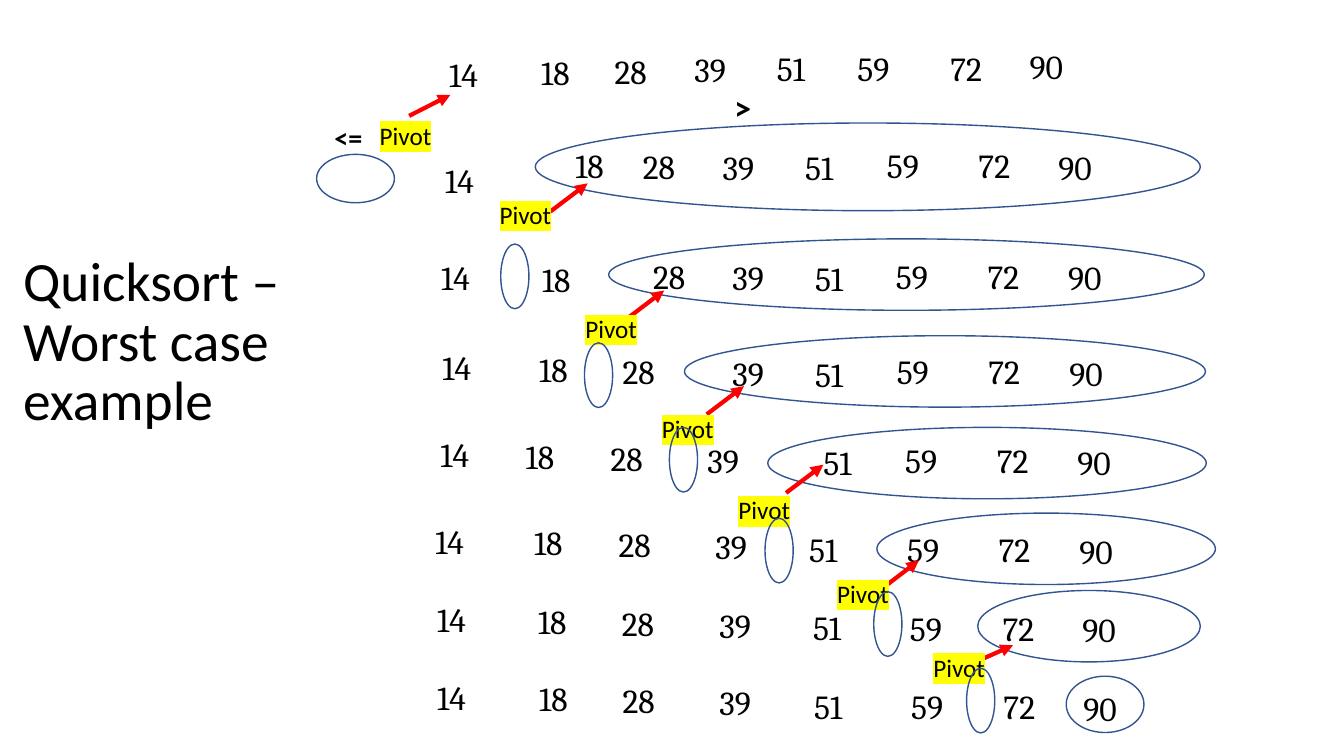
from dataclasses import dataclass

from lxml.etree import SubElement
from pptx import Presentation
from pptx.dml.color import RGBColor
from pptx.enum.shapes import MSO_CONNECTOR, MSO_SHAPE
from pptx.enum.text import MSO_ANCHOR, MSO_AUTO_SIZE, PP_ALIGN
from pptx.oxml.ns import qn
from pptx.util import Cm, Pt


@dataclass(frozen=True)
class Theme:
    text: str = "000000"
    ring: str = "325491"
    arrow: str = "FF0000"
    highlight: str = "FFFF00"
    body_font: str = "Calibri"
    number_font: str = "Cambria"
    title_size: float = 39.6
    number_size: float = 24
    label_size: float = 18
    sign_size: float = 20
    ring_width: float = 1
    arrow_width: float = 3


@dataclass(frozen=True)
class Step:
    lefts: tuple
    tops: tuple
    larger: tuple = ()
    smaller: tuple = ()
    pivot: tuple = ()
    arrow: tuple = ()


THEME = Theme()
NUMBERS = (14, 18, 28, 39, 51, 59, 72, 90)
NUMBER_BOX = (1.45, 1.27)
PIVOT_BOX = (2.03, 1.02)
SIGN_BOX = (1.22, 1.12)
EMPTY_RING = (0.71, 1.63)

STEPS = (
    Step(
        lefts=(11.07, 13.39, 15.24, 17.25, 19.33, 21.36, 23.7, 25.7),
        tops=(1.24, 1.19, 1.17, 1.12, 1.09, 1.09, 1.09, 1.02),
        pivot=(9.32, 2.9), arrow=(10.31, 2.92, 11.35, 2.39),
    ),
    Step(
        lefts=(10.97, 14.25, 15.95, 17.96, 20.04, 22.1, 24.41, 26.42),
        tops=(3.91, 3.53, 3.56, 3.58, 3.58, 3.53, 3.53, 3.58),
        larger=(13.49, 3.1, 16.76, 2.21), smaller=(7.98, 3.89, 1.96, 1.22),
        pivot=(12.34, 4.9), arrow=(13.87, 5.33, 14.81, 4.62),
    ),
    Step(
        lefts=(10.87, 13.41, 16.21, 18.21, 20.29, 22.33, 24.64, 26.67),
        tops=(6.35, 6.4, 6.32, 6.35, 6.38, 6.32, 6.32, 6.35),
        larger=(15.34, 6.02, 15.01, 1.8), smaller=(12.62, 6.15, *EMPTY_RING),
        pivot=(14.5, 7.77), arrow=(15.8, 8.03, 16.74, 7.32),
    ),
    Step(
        lefts=(10.9, 13.34, 15.44, 18.21, 20.29, 22.35, 24.66, 26.7),
        tops=(8.61, 8.66, 8.71, 8.76, 8.79, 8.71, 8.71, 8.76),
        larger=(17.25, 8.46, 13.13, 1.8), smaller=(14.73, 8.64, *EMPTY_RING),
        pivot=(16.43, 10.29), arrow=(17.81, 10.44, 18.75, 9.73),
    ),
    Step(
        lefts=(10.85, 13, 15.14, 17.58, 20.5, 22.56, 24.87, 26.9),
        tops=(10.8, 10.85, 10.9, 10.95, 11, 10.95, 10.95, 11),
        larger=(19.35, 10.77, 11.05, 1.8), smaller=(16.87, 10.77, *EMPTY_RING),
        pivot=(18.36, 12.34), arrow=(19.81, 12.42, 20.75, 11.71),
    ),
    Step(
        lefts=(10.72, 13.21, 15.34, 17.78, 20.14, 22.61, 24.92, 26.95),
        tops=(13, 13.03, 13.08, 13.13, 13.21, 13.21, 13.21, 13.26),
        larger=(22.1, 12.93, 8.53, 1.8), smaller=(19.28, 13.06, *EMPTY_RING),
        pivot=(20.85, 14.45), arrow=(22.23, 14.83, 23.16, 14.12),
    ),
    Step(
        lefts=(10.77, 13.31, 15.42, 17.88, 20.24, 22.68, 25.02, 27.03),
        tops=(14.96, 15.01, 15.06, 15.11, 15.16, 15.19, 15.19, 15.21),
        larger=(24.64, 14.88, 5.61, 1.8), smaller=(22.02, 14.91, *EMPTY_RING),
        pivot=(23.27, 16.31), arrow=(24.79, 16.59, 25.53, 16.26),
    ),
    Step(
        lefts=(10.77, 13.34, 15.44, 17.88, 20.27, 22.71, 25.04, 27.05),
        tops=(16.94, 16.97, 17.02, 17.07, 17.15, 17.15, 17.15, 17.2),
        larger=(26.87, 17.04, 1.96, 1.42), smaller=(24.36, 16.84, *EMPTY_RING),
    ),
)


def lengths(values):
    return [Cm(value) for value in values]


def write(paragraph, text, *, size, font=THEME.body_font, bold=False, highlight=None):
    paragraph.alignment = PP_ALIGN.LEFT
    run = paragraph.add_run()
    run.text = text
    run.font.name = font
    run.font.size = Pt(size)
    run.font.bold = bold
    run.font.color.rgb = RGBColor.from_string(THEME.text)
    if highlight:
        properties = run._r.get_or_add_rPr()
        marker = SubElement(properties, qn("a:highlight"))
        SubElement(marker, qn("a:srgbClr"), val=highlight)
        properties.find(qn("a:solidFill")).addnext(marker)


class SlideBuilder:
    def __init__(self, slide, theme):
        self.slide = slide
        self.theme = theme

    def title(self, text, box):
        title = self.slide.shapes.title
        title.left, title.top, title.width, title.height = lengths(box)
        frame = title.text_frame
        frame.auto_size = MSO_AUTO_SIZE.NONE
        frame.word_wrap = True
        frame.vertical_anchor = MSO_ANCHOR.MIDDLE
        paragraph = frame.paragraphs[0]
        paragraph.line_spacing = 0.9
        write(paragraph, text, size=self.theme.title_size)

    def text(self, text, box, wrap=False, **style):
        frame = self.slide.shapes.add_textbox(*lengths(box)).text_frame
        frame.word_wrap = wrap
        frame.auto_size = MSO_AUTO_SIZE.SHAPE_TO_FIT_TEXT
        write(frame.paragraphs[0], text, **style)

    def ring(self, box):
        shape = self.slide.shapes.add_shape(MSO_SHAPE.OVAL, *lengths(box))
        shape.shadow.inherit = False
        shape.fill.background()
        shape.line.color.rgb = RGBColor.from_string(self.theme.ring)
        shape.line.width = Pt(self.theme.ring_width)

    def arrow(self, ends):
        connector = self.slide.shapes.add_connector(MSO_CONNECTOR.STRAIGHT, *lengths(ends))
        connector.line.color.rgb = RGBColor.from_string(self.theme.arrow)
        connector.line.width = Pt(self.theme.arrow_width)
        SubElement(connector.line._get_or_add_ln(), qn("a:tailEnd"), type="triangle")
        SubElement(connector._element.spPr, qn("a:effectLst"))

    def step(self, step):
        if step.larger:
            self.ring(step.larger)
        for number, left, top in zip(NUMBERS, step.lefts, step.tops):
            self.text(str(number), (left, top, *NUMBER_BOX),
                      size=self.theme.number_size, font=self.theme.number_font)
        if step.pivot:
            self.arrow(step.arrow)
            self.text("Pivot", (*step.pivot, *PIVOT_BOX), wrap=True,
                      size=self.theme.label_size, highlight=self.theme.highlight)
        if step.smaller:
            self.ring(step.smaller)


def main():
    presentation = Presentation()
    presentation.slide_width, presentation.slide_height = lengths((33.87, 19.05))
    slide = presentation.slides.add_slide(presentation.slide_layouts[5])
    builder = SlideBuilder(slide, THEME)
    builder.title("Quicksort – Worst case example", (0.33, 6.5, 7.29, 4.29))
    for step in STEPS:
        builder.step(step)
    builder.text("<=", (8.18, 2.92, *SIGN_BOX), size=THEME.sign_size, bold=True)
    builder.text(">", (18.26, 2.06, *SIGN_BOX), wrap=True, size=THEME.number_size, bold=True)
    presentation.save("out.pptx")


if __name__ == "__main__":
    main()
